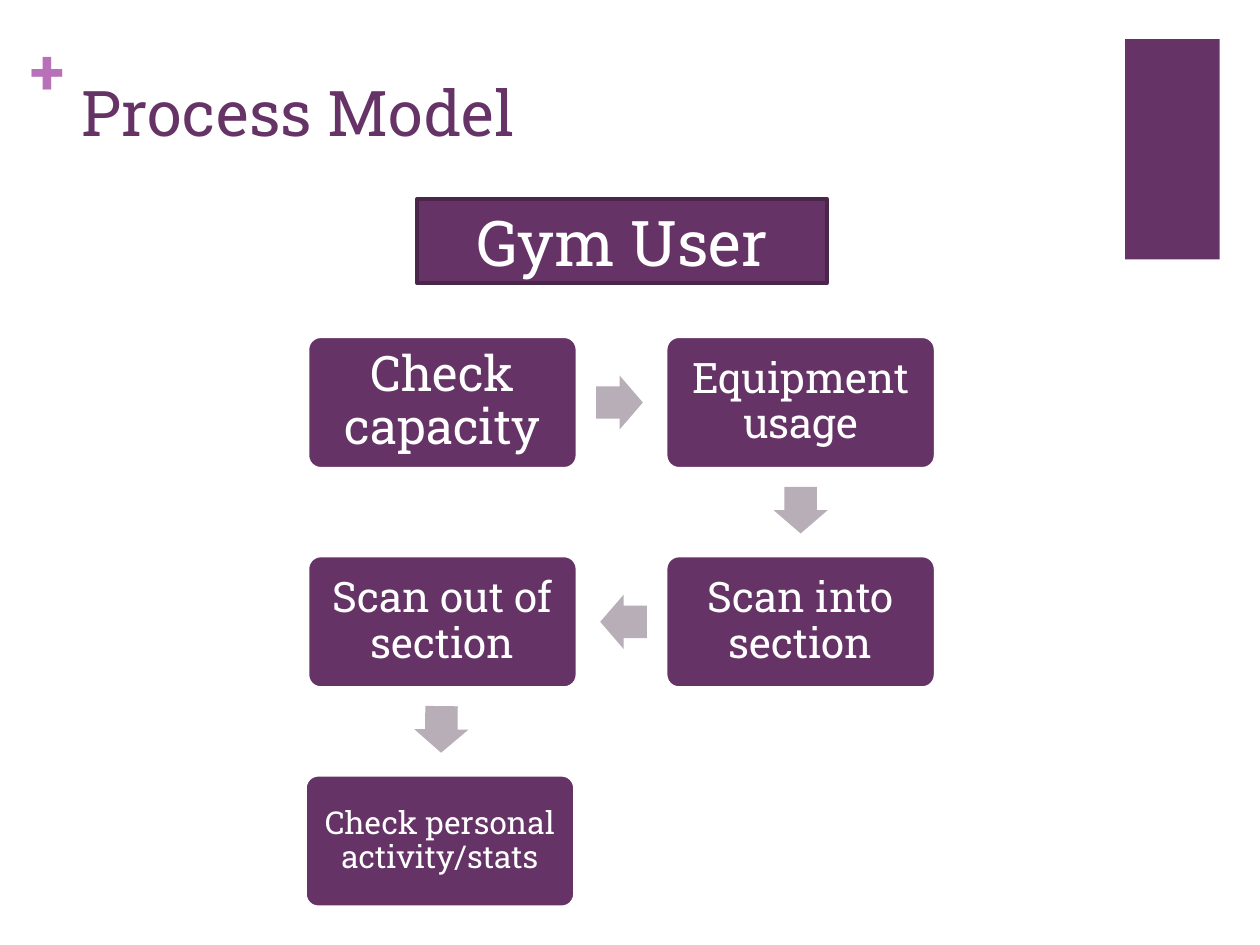
import math
from pptx import Presentation
from pptx import util as u
from pptx.dml.color import RGBColor
from pptx.enum import shapes, text

FONT = "Roboto Slab"
COLORS = {"purple": "663366", "edge": "4B264B", "orchid": "B870B8",
          "arrow": "B8AEB8", "white": "FFFFFF"}

# Content: wording, left, row, text size, inset (cm)
STEPS = [
    ("Check capacity", 6.2, 0, 28, 0.3),
    ("Equipment usage", 13.42, 0, 24, 0.25),
    ("Scan into section", 13.42, 1, 24, 0.25),
    ("Scan out of section", 6.2, 1, 24, 0.25),
    ("Check personal activity/stats", 6.15, 2, 18, 0.18),
]
STEP_W, STEP_H = 5.44, 2.67
FIRST_TOP, ROW_PITCH = 6.78, 4.42
ARROW_W, ARROW_H = 0.94, 1.09
ARROW_SETBACK = 0.04


def color(name):
    return RGBColor.from_string(COLORS[name])


def add_block(page, kind, left, top, width, height, fill, line=None):
    block = page.shapes.add_shape(
        kind, u.Cm(left), u.Cm(top), u.Cm(width), u.Cm(height))
    block.shadow.inherit = False
    block.fill.solid()
    block.fill.fore_color.rgb = color(fill)
    if line:
        block.line.color.rgb = color(line)
        block.line.width = u.Pt(2)
    else:
        block.line.fill.background()
    return block


def write(box, words, size, tint, align, anchor, insets, bold=False):
    frame = box.text_frame
    frame.word_wrap = True
    frame.vertical_anchor = anchor
    frame.margin_left = frame.margin_right = u.Cm(insets[0])
    frame.margin_top = frame.margin_bottom = u.Cm(insets[1])
    para = frame.paragraphs[0]
    para.text = words
    para.alignment = align
    para.font.name = FONT
    para.font.size = u.Pt(size)
    para.font.bold = bold
    para.font.color.rgb = color(tint)
    return para


def add_label(page, words, left, top, width, height, tint, insets, bold=False):
    box = page.shapes.add_textbox(
        u.Cm(left), u.Cm(top), u.Cm(width), u.Cm(height))
    write(box, words, 36, tint, text.PP_ALIGN.LEFT, text.MSO_ANCHOR.TOP,
          insets, bold)


def add_step(page, words, left, row, size, inset):
    """Draw one step and return its centre."""
    top = FIRST_TOP + row * ROW_PITCH
    box = add_block(page, shapes.MSO_SHAPE.ROUNDED_RECTANGLE, left, top,
                    STEP_W, STEP_H, "purple", "white")
    box.adjustments[0] = 0.1
    para = write(box, words, size, "white", text.PP_ALIGN.CENTER,
                 text.MSO_ANCHOR.MIDDLE, (inset, inset))
    para.line_spacing = 0.9
    return left + STEP_W / 2, top + STEP_H / 2


def add_arrow(page, start, end):
    """Place a block arrow just before the midpoint between two steps."""
    angle = math.atan2(end[1] - start[1], end[0] - start[0])
    x = (start[0] + end[0]) / 2 - ARROW_SETBACK * math.cos(angle)
    y = (start[1] + end[1]) / 2 - ARROW_SETBACK * math.sin(angle)
    arrow = add_block(page, shapes.MSO_SHAPE.RIGHT_ARROW, x - ARROW_W / 2,
                      y - ARROW_H / 2, ARROW_W, ARROW_H, "arrow")
    arrow.adjustments[0] = 0.6
    arrow.adjustments[1] = 0.5
    arrow.rotation = math.degrees(angle)


def main():
    deck = Presentation()
    deck.slide_width, deck.slide_height = u.Cm(25.4), u.Cm(19.05)
    page = deck.slides.add_slide(deck.slide_layouts[6])

    # Side bar, plus sign and title
    add_block(page, shapes.MSO_SHAPE.RECTANGLE, 22.68, 0.79, 1.91, 4.44, "purple")
    add_label(page, "+", 0.61, 0.64, 0.74, 1.55, "orchid", (0, 0), bold=True)
    add_label(page, "Process Model", 1.4, 1.35, 20.98, 3.1, "purple", (0.25, 0.13))

    # Steps and the arrows between them
    centres = [add_step(page, *step) for step in STEPS]
    for start, end in zip(centres, centres[1:]):
        add_arrow(page, start, end)

    # Actor heading
    actor = add_block(page, shapes.MSO_SHAPE.RECTANGLE, 8.41, 4.01, 8.26, 1.7,
                      "purple", "edge")
    write(actor, "Gym User", 36, "white", text.PP_ALIGN.CENTER,
          text.MSO_ANCHOR.MIDDLE, (0.25, 0.13))

    deck.save("out.pptx")


if __name__ == "__main__":
    main()
